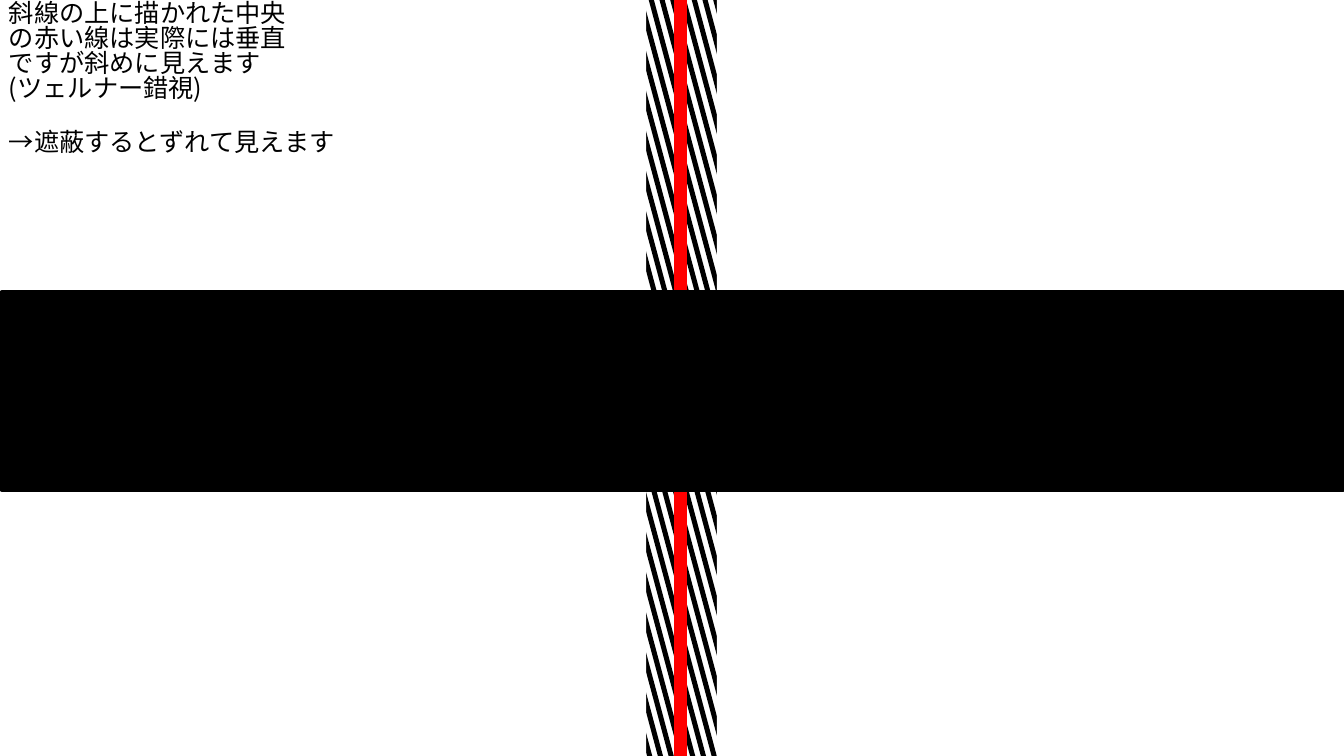
from dataclasses import dataclass

from lxml import etree
from pptx import Presentation
from pptx.dml.color import RGBColor
from pptx.enum import shapes, text
from pptx.oxml import ns
from pptx.util import Inches, Pt


@dataclass(frozen=True)
class Theme:
    black: RGBColor = RGBColor(0, 0, 0)
    white: RGBColor = RGBColor(255, 255, 255)
    red: RGBColor = RGBColor(255, 0, 0)
    font: str = "Noto Sans CJK JP"
    body: float = 18
    line_spacing: float = 0.83
    red_line: float = 8.75
    band_line: float = 4.5


@dataclass(frozen=True)
class Box:
    left: float
    top: float
    width: float
    height: float
    color: RGBColor
    rotation: float = 0
    line: float = 0


@dataclass(frozen=True)
class Caption:
    left: float
    top: float
    width: float
    height: float
    words: str


THEME = Theme()

# Diagonal stripes, evenly spaced between the first and the last
STRIPES = 80
FIRST, LAST = (2.28, -0.23), (10.14, -2.33)
STEP_X, STEP_Y = ((b - a) / (STRIPES - 1) for a, b in zip(FIRST, LAST))

# White masks that leave a narrow strip, and the band across it
LEFT_MASK = Box(0, -0.03, 6.41, 7.53, THEME.white)
RIGHT_MASK = Box(7.11, -0.03, 6.21, 7.53, THEME.white)
BAND = Box(0.02, 2.91, 13.3, 1.94, THEME.black, line=THEME.band_line)

ILLUSION = Caption(-0.01, -0.03, 2.97, 1.31,
                   "斜線の上に描かれた中央の赤い線は実際には垂直ですが斜めに見えます(ツェルナー錯視)")
OCCLUSION = Caption(-0.01, 1.25, 3.49, 0.4, "→遮蔽するとずれて見えます")


def add_box(parent, box: Box) -> None:
    sp = parent.add_shape(shapes.MSO_SHAPE.RECTANGLE, Inches(box.left), Inches(box.top),
                          Inches(box.width), Inches(box.height))
    sp.shadow.inherit = False
    sp.rotation = box.rotation
    sp.fill.solid()
    sp.fill.fore_color.rgb = box.color
    if box.line:
        sp.line.color.rgb = box.color
        sp.line.width = Pt(box.line)
    else:
        sp.line.fill.background()


def add_caption(parent, caption: Caption) -> None:
    sp = parent.add_textbox(Inches(caption.left), Inches(caption.top),
                            Inches(caption.width), Inches(caption.height))
    tf = sp.text_frame
    tf.text = caption.words
    tf.word_wrap = True
    tf.auto_size = text.MSO_AUTO_SIZE.SHAPE_TO_FIT_TEXT
    p = tf.paragraphs[0]
    p.line_spacing = THEME.line_spacing
    r = p.runs[0]
    r.font.size = Pt(THEME.body)
    r.font.name = THEME.font
    r.font.color.rgb = THEME.black
    etree.SubElement(r.font._element, ns.qn("a:ea"), typeface=THEME.font)


def add_red_line(parent, x: float, bottom: float) -> None:
    line = parent.add_connector(shapes.MSO_CONNECTOR.STRAIGHT,
                                Inches(x), 0, Inches(x), Inches(bottom))
    line.line.color.rgb = THEME.red
    line.line.width = Pt(THEME.red_line)
    etree.SubElement(line._element.spPr, ns.qn("a:effectLst"))


def main() -> None:
    prs = Presentation()
    prs.slide_width, prs.slide_height = Inches(13.33), Inches(7.5)
    s = prs.slides.add_slide(prs.slide_layouts[6])

    # Striped background
    stripes = s.shapes.add_group_shape().shapes
    for i in range(STRIPES):
        add_box(stripes, Box(FIRST[0] + i * STEP_X, FIRST[1] + i * STEP_Y,
                             0.05, 10.03, THEME.black, rotation=345))

    # Masks, vertical line, band and captions, back to front
    add_box(s.shapes, LEFT_MASK)
    add_caption(s.shapes, ILLUSION)
    add_box(s.shapes, RIGHT_MASK)
    add_red_line(s.shapes, 6.75, 7.5)
    add_box(s.shapes, BAND)
    add_caption(s.shapes, OCCLUSION)
    prs.save("out.pptx")


if __name__ == "__main__":
    main()
